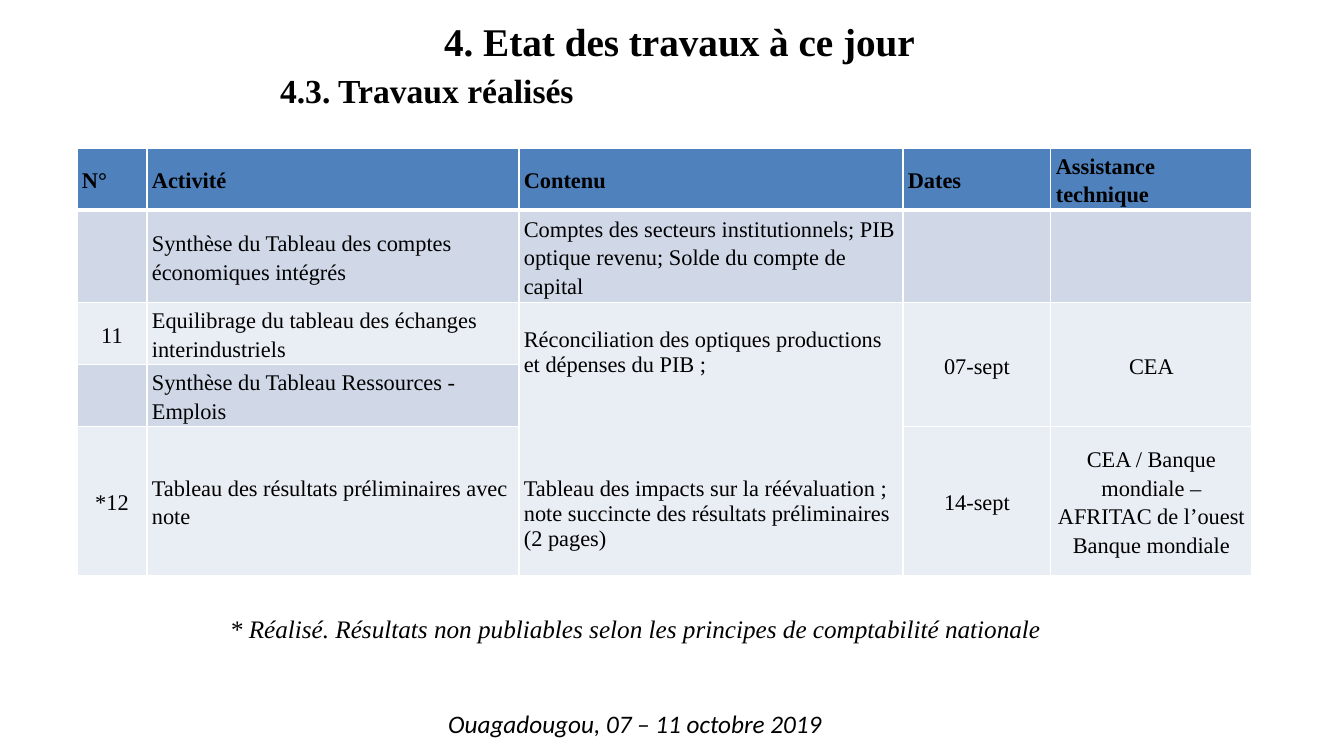
from lxml import etree
from pptx import Presentation
from pptx.dml.color import RGBColor as RGB
from pptx.enum.text import MSO_ANCHOR as Anchor, PP_ALIGN as Align
from pptx.oxml import parse_xml
from pptx.oxml.ns import nsdecls
from pptx.util import Pt

PX = 914400 / 100.8
BLACK = RGB(0x00, 0x00, 0x00)
WHITE = RGB(0xFF, 0xFF, 0xFF)
BLUE = RGB(0x4F, 0x81, 0xBD)
DARK = RGB(0xD0, 0xD8, 0xE8)
LIGHT = RGB(0xE9, 0xED, 0xF4)
SERIF = "Times New Roman"

COLS = [70, 372, 384, 148, 201]
ROWS = [61, 93, 62, 61, 149]
CELLS = [
    ["N°", "Activité", "Contenu", "Dates", "Assistance technique"],
    ["", "Synthèse du Tableau des comptes économiques intégrés",
     "Comptes des secteurs institutionnels; PIB optique revenu; "
     "Solde du compte de capital", "", ""],
    ["11", "Equilibrage du tableau des échanges interindustriels",
     "Réconciliation des optiques productions et dépenses du PIB ;\n"
     "Tableau des impacts sur la réévaluation ; note succincte des "
     "résultats préliminaires (2 pages)", "07-sept", "CEA"],
    ["", "Synthèse du Tableau Ressources - Emplois", "", "", ""],
    ["*12", "Tableau des résultats préliminaires avec note", "", "14-sept",
     "CEA / Banque mondiale – AFRITAC de l’ouest Banque mondiale"],
]
# First row, column and last row of each merged block
SPANS = [(2, 2, 4), (2, 3, 3), (2, 4, 3)]


def px(n):
    return round(n * PX)


def style(frame, size, font=SERIF, bold=False, italic=False, align=Align.LEFT):
    for par in frame.paragraphs:
        par.alignment = align
        for run in par.runs:
            face = run.font
            face.name, face.size = font, Pt(size)
            face.bold, face.italic = bold, italic
            face.color.rgb = BLACK


def add_title(slide, box, text):
    title = slide.shapes.title
    title.left, title.top, title.width, title.height = map(px, box)
    frame = title.text_frame
    frame.text = text
    frame.vertical_anchor = Anchor.MIDDLE
    style(frame, 28, bold=True, align=Align.CENTER)


def add_text(slide, box, text, size, wrap=True, **look):
    frame = slide.shapes.add_textbox(*map(px, box)).text_frame
    frame.word_wrap = wrap
    frame.text = text
    style(frame, size, **look)
    return frame


def add_edges(cell, row):
    """Draw white borders, thicker under the header row."""
    heavy = {0: "lnB", 1: "lnT"}.get(row)
    props = cell._tc.get_or_add_tcPr()
    for side in ("lnL", "lnR", "lnT", "lnB"):
        width = Pt(3 if side == heavy else 1)
        edge = parse_xml(f'<a:{side} {nsdecls("a")} w="{width}"/>')
        fill = etree.SubElement(edge, edge.tag.replace(side, "solidFill"))
        etree.SubElement(fill, edge.tag.replace(side, "srgbClr"), val=str(WHITE))
        props.append(edge)


def fill_cell(cell, row, col, text):
    add_edges(cell, row)
    cell.fill.solid()
    cell.fill.fore_color.rgb = BLUE if row == 0 else DARK if row % 2 else LIGHT
    cell.vertical_anchor = Anchor.MIDDLE
    cell.margin_left = cell.margin_right = px(5)
    cell.margin_top = cell.margin_bottom = 0
    if not text:
        return
    frame = cell.text_frame
    frame.text = text
    mid = row > 0 and col in (0, 3, 4)
    style(frame, 16, bold=row == 0, align=Align.CENTER if mid else Align.LEFT)
    pars = frame.paragraphs
    if len(pars) == 1:
        pars[0].line_spacing = 1.15
    for par in pars[1:]:
        par.space_before = Pt(71)


def add_grid(slide, left, top):
    box = map(px, (left, top, sum(COLS), sum(ROWS)))
    table = slide.shapes.add_table(len(ROWS), len(COLS), *box).table
    for col, width in zip(table.columns, COLS):
        col.width = px(width)
    for r, (height, texts) in enumerate(zip(ROWS, CELLS)):
        table.rows[r].height = px(height)
        for c, text in enumerate(texts):
            fill_cell(table.cell(r, c), r, c, text)
    for first, col, last in SPANS:
        table.cell(first, col).merge(table.cell(last, col))


def add_works(deck):
    slide = deck.slides.add_slide(deck.slide_layouts[5])
    add_title(slide, (251, 5, 857, 72), "4. Etat des travaux à ce jour")
    frame = add_text(slide, (220, 60, 920, 64), "4.3. Travaux réalisés", 24,
                     bold=True)
    frame.margin_left, frame.margin_top = px(60), px(10)
    add_text(slide, (436, 703, 398, 40), "Ouagadougou, 07 – 11 octobre 2019",
             18, wrap=False, font="Calibri", italic=True, align=Align.CENTER)
    add_grid(slide, 77, 148)
    add_text(slide, (220, 608, 913, 40), "* Réalisé. Résultats non publiables "
             "selon les principes de comptabilité nationale", 18, italic=True)


def main():
    deck = Presentation()
    deck.slide_width, deck.slide_height = px(1344), px(756)
    add_works(deck)
    deck.save("out.pptx")


if __name__ == "__main__":
    main()
